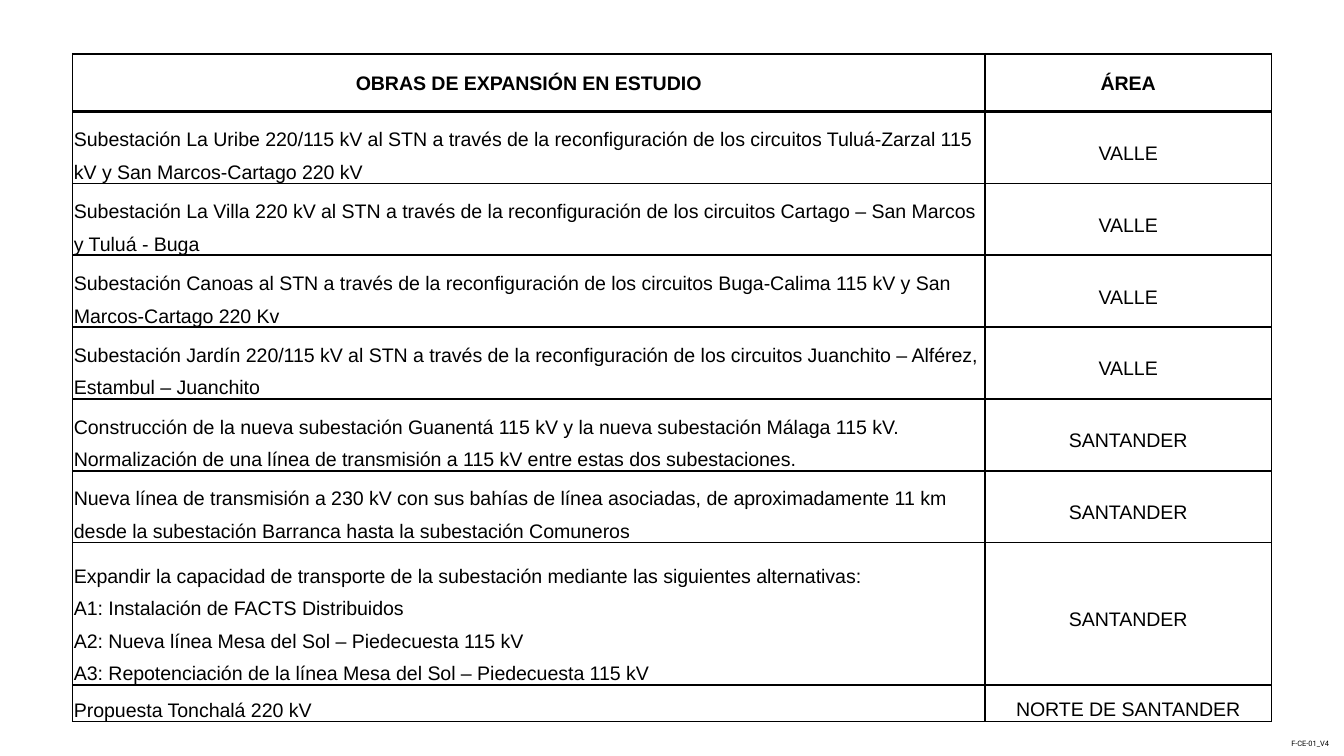
from copy import deepcopy

from lxml import etree
from pptx import Presentation
from pptx.dml.color import RGBColor
from pptx.enum import text as t
from pptx.oxml import ns
from pptx.util import Inches, Pt

BLACK = "000000"
SLIDE_WIDTH = 10
SLIDE_HEIGHT = SLIDE_WIDTH * 9 / 16
HEADER = ("OBRAS DE EXPANSIÓN EN ESTUDIO", "ÁREA")
WORKS = [
    ("Subestación La Uribe 220/115 kV al STN a través de la reconfiguración de los circuitos "
     "Tuluá-Zarzal 115 kV y San Marcos-Cartago 220 kV", "VALLE"),
    ("Subestación La Villa 220 kV al STN a través de la reconfiguración de los circuitos "
     "Cartago – San Marcos y Tuluá - Buga", "VALLE"),
    ("Subestación Canoas al STN a través de la reconfiguración de los circuitos "
     "Buga-Calima 115 kV y San Marcos-Cartago 220 Kv", "VALLE"),
    ("Subestación Jardín 220/115 kV al STN a través de la reconfiguración de los circuitos "
     "Juanchito – Alférez, Estambul – Juanchito", "VALLE"),
    ("Construcción de la nueva subestación Guanentá 115 kV y la nueva subestación Málaga 115 kV. \n"
     "Normalización de una línea de transmisión a 115 kV entre estas dos subestaciones.", "SANTANDER"),
    ("Nueva línea de transmisión a 230 kV con sus bahías de línea asociadas, de aproximadamente "
     "11 km desde la subestación Barranca hasta la subestación Comuneros", "SANTANDER"),
    ("Expandir la capacidad de transporte de la subestación mediante las siguientes alternativas:\n"
     "A1: Instalación de FACTS Distribuidos \n"
     "A2: Nueva línea Mesa del Sol – Piedecuesta 115 kV\n"
     "A3: Repotenciación de la línea Mesa del Sol – Piedecuesta 115 kV", "SANTANDER"),
    ("Propuesta Tonchalá 220 kV", "NORTE DE SANTANDER"),
]
FORM_CODE = "F-CE-01_V4"
COLUMN_WIDTHS = (6.79, 2.13)
ROW_HEIGHTS = [0.43] + [0.53] * 6 + [1.05, 0.27]


def color(value):
    return RGBColor.from_string(value)


def write(frame, words, size=10.5, font="Arial", bold=False, align=None, spacing=None):
    paragraph = frame.paragraphs[0]
    paragraph.text = words
    paragraph.alignment = align
    paragraph.line_spacing = spacing
    for run in paragraph.runs:
        run.font.size = Pt(size)
        run.font.name = font
        run.font.bold = bold
        run.font.color.rgb = color(BLACK)
    for line_break in paragraph._p.findall(ns.qn("a:br")):
        line_break.append(deepcopy(paragraph.runs[0]._r.rPr))


def add_borders(cell, bottom):
    properties = cell._tc.get_or_add_tcPr()
    sides = (("L", 1), ("R", 1), ("T", 1), ("B", bottom))
    for position, (side, width) in enumerate(sides):
        line = etree.Element(ns.qn(f"a:ln{side}"), w=str(Pt(width)))
        fill = etree.SubElement(line, ns.qn("a:solidFill"))
        etree.SubElement(fill, ns.qn("a:srgbClr"), val=BLACK)
        properties.insert(position, line)


def add_works_table(slide):
    rows = [HEADER] + WORKS
    table = slide.shapes.add_table(
        len(rows), len(COLUMN_WIDTHS), Inches(0.54), Inches(0.4),
        Inches(sum(COLUMN_WIDTHS)), Inches(sum(ROW_HEIGHTS))).table
    table.first_row = table.horz_banding = False
    for column, width in zip(table.columns, COLUMN_WIDTHS):
        column.width = Inches(width)
    for r, (row, height) in enumerate(zip(rows, ROW_HEIGHTS)):
        table.rows[r].height = Inches(height)
        header = r == 0
        for c, words in enumerate(row):
            description = c == 0 and not header
            cell = table.cell(r, c)
            cell.margin_left = cell.margin_right = cell.margin_top = Inches(0.01)
            cell.margin_bottom = 0
            cell.vertical_anchor = t.MSO_ANCHOR.BOTTOM if description else t.MSO_ANCHOR.MIDDLE
            cell.fill.background()
            add_borders(cell, bottom=2 if header else 1)
            write(cell.text_frame, words, bold=header,
                  align=None if description else t.PP_ALIGN.CENTER,
                  spacing=None if header else 1.5)


def add_form_code(slide):
    frame = slide.shapes.add_textbox(
        Inches(9.51), Inches(5.45), Inches(0.49), Inches(0.17)).text_frame
    frame.word_wrap = False
    frame.auto_size = t.MSO_AUTO_SIZE.SHAPE_TO_FIT_TEXT
    write(frame, FORM_CODE, size=4, font="Roboto")


def main():
    deck = Presentation()
    deck.slide_width, deck.slide_height = Inches(SLIDE_WIDTH), Inches(SLIDE_HEIGHT)
    slide = deck.slides.add_slide(deck.slide_layouts[6])
    add_form_code(slide)
    add_works_table(slide)
    deck.save("out.pptx")


if __name__ == "__main__":
    main()
